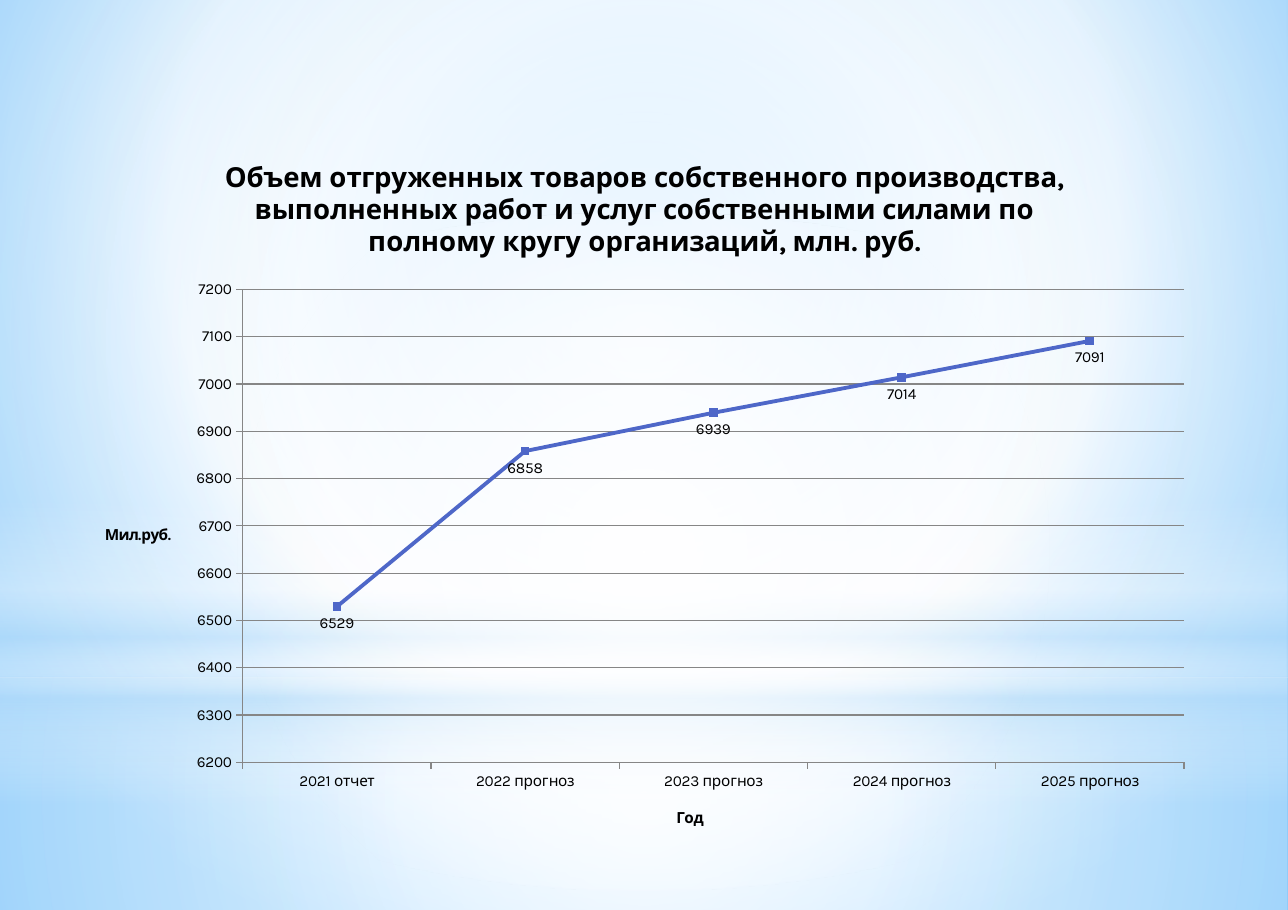
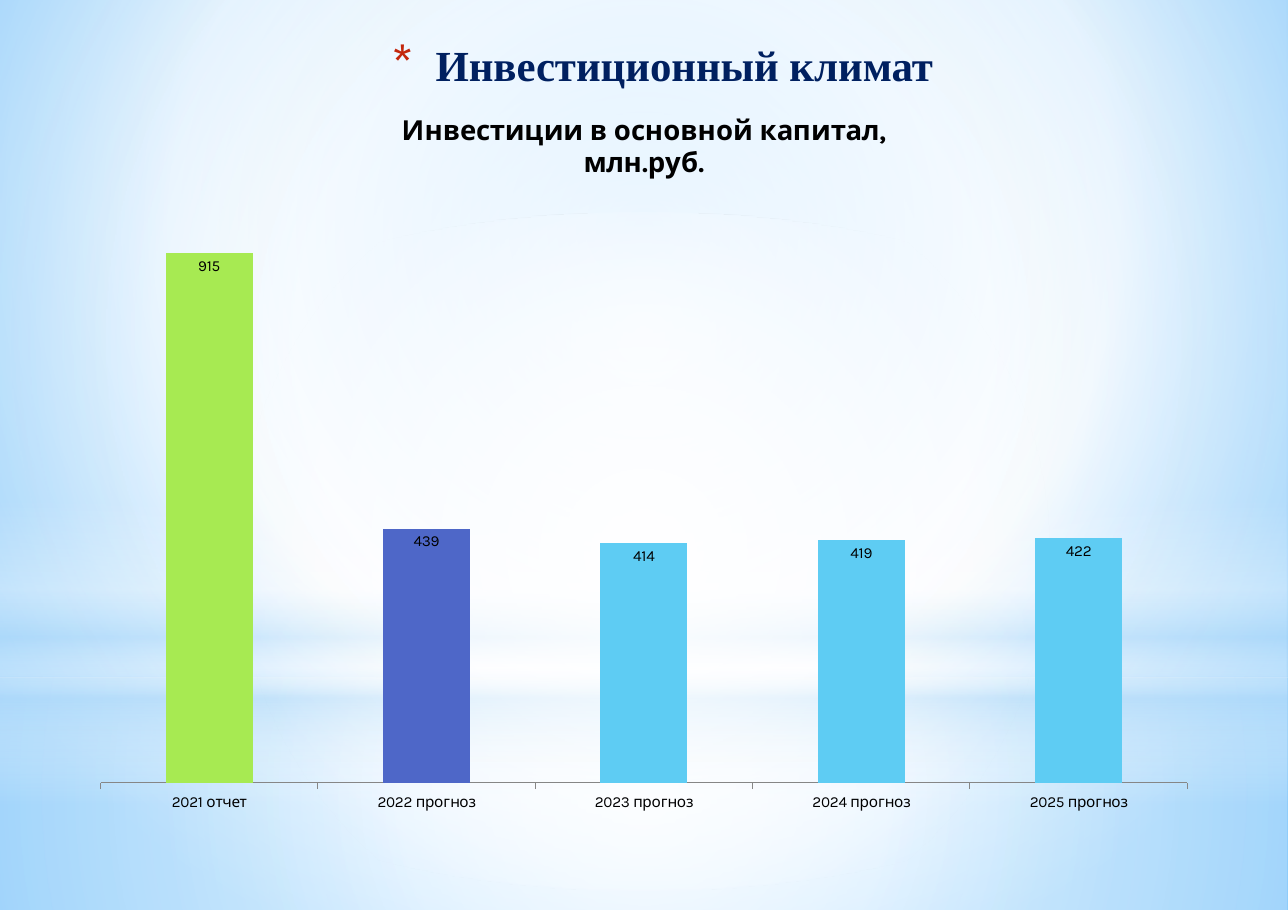
"""Build two slides with economic forecast charts on a shared sky-blue backdrop."""
from dataclasses import dataclass
from typing import Optional

from pptx import Presentation
from pptx.chart.chart import Chart
from pptx.chart.data import CategoryChartData
from pptx.dml.color import RGBColor
from pptx.enum.chart import XL_CHART_TYPE as ChartType
from pptx.enum.chart import XL_LABEL_POSITION as LabelPosition
from pptx.enum.chart import XL_MARKER_STYLE as MarkerStyle
from pptx.enum.shapes import MSO_SHAPE as Preset
from pptx.enum.text import MSO_ANCHOR as Anchor
from pptx.enum.text import PP_ALIGN as Align
from pptx.oxml import parse_xml
from pptx.oxml.ns import nsdecls
from pptx.slide import Slide, SlideLayout
from pptx.text.text import TextFrame
from pptx.util import Inches, Pt


@dataclass(frozen=True)
class Theme:
    chart_font: str = "Karla"
    heading_font: str = "Times New Roman"
    text: str = "000000"
    heading: str = "002060"
    bullet: str = "C3260C"
    axis: str = "868686"
    blue: str = "4E67C8"
    sky: str = "5ECCF3"
    green: str = "A7EA52"
    white: str = "FFFFFF"
    haze: str = "B4DCFA"
    heading_size: int = 28
    title_size: int = 18
    label_size: int = 10


THEME = Theme()
WIDTH, HEIGHT = 11.69, 8.26
CENTER = (50, 50, 50, 50)
YEARS = ("2021 отчет", "2022 прогноз", "2023 прогноз", "2024 прогноз", "2025 прогноз")


@dataclass(frozen=True)
class Stop:
    position: int
    color: str
    opacity: int = 100


@dataclass(frozen=True)
class Gradient:
    stops: tuple[Stop, ...]
    focus: Optional[tuple[int, int, int, int]] = CENTER


@dataclass(frozen=True)
class Glow:
    preset: Preset
    top: float
    height: float
    gradient: Gradient


@dataclass(frozen=True)
class ChartBox:
    kind: ChartType
    box: tuple[float, float, float, float]
    title: str
    values: tuple[int, ...]
    color: str
    label_position: LabelPosition
    scale: tuple[int, int, int]


BACKDROP = Gradient(
    (Stop(0, "9ED5FF"), Stop(60, THEME.white), Stop(100, "5BB9FF")), (20, 10, 20, 60)
)
GLOWS = (
    Glow(Preset.RECTANGLE, 6.15, 2.11, Gradient(
        (Stop(0, THEME.white, 91), Stop(37, THEME.white, 76), Stop(100, THEME.haze, 79)))),
    Glow(Preset.RECTANGLE, 0, 6.15, Gradient(
        (Stop(0, THEME.white, 89), Stop(48, THEME.white, 62), Stop(100, THEME.haze, 79)))),
    Glow(Preset.RECTANGLE, 4.54, 2.75, Gradient(
        (Stop(0, THEME.white, 0), Stop(29, THEME.white, 30), Stop(45, THEME.haze, 40),
         Stop(55, THEME.white, 26), Stop(65, THEME.haze, 60), Stop(100, THEME.white, 0)), None)),
    Glow(Preset.OVAL, 1.93, 6.15, Gradient(
        (Stop(0, THEME.white), Stop(56, THEME.white, 0)))),
)
SHIPMENTS = ChartBox(
    ChartType.LINE_MARKERS, (0.75, 1.21, 10.2, 6.5),
    "Объем отгруженных товаров собственного производства, выполненных работ и услуг "
    "собственными силами по полному кругу организаций, млн. руб.",
    (6529, 6858, 6939, 7014, 7091), THEME.blue, LabelPosition.BELOW, (6200, 7200, 100),
)
INVESTMENTS = ChartBox(
    ChartType.COLUMN_STACKED, (0.76, 0.81, 10.17, 6.64),
    "Инвестиции в основной капитал,\nмлн.руб.",
    (915, 439, 414, 419, 422), THEME.sky, LabelPosition.INSIDE_END, (0, 1000, 100),
)


def rgb(color: str) -> RGBColor:
    return RGBColor.from_string(color)


def set_gradient(element, gradient: Gradient) -> None:
    stops = "".join(
        f'<a:gs pos="{stop.position * 1000}"><a:srgbClr val="{stop.color}">'
        f'<a:alpha val="{stop.opacity * 1000}"/></a:srgbClr></a:gs>'
        for stop in gradient.stops
    )
    if gradient.focus:
        sides = " ".join(
            f'{side}="{share * 1000}"' for side, share in zip("ltrb", gradient.focus)
        )
        direction = f'<a:path path="circle"><a:fillToRect {sides}/></a:path>'
    else:
        direction = '<a:lin ang="5400000" scaled="0"/>'
    old = element.xpath(".//a:gradFill")[0]
    old.getparent().replace(old, parse_xml(
        f'<a:gradFill {nsdecls("a")} rotWithShape="1">'
        f"<a:gsLst>{stops}</a:gsLst>{direction}</a:gradFill>"
    ))


def clear_layout(layout: SlideLayout) -> None:
    for placeholder in list(layout.placeholders):
        layout.shapes.element.remove(placeholder.element)


def draw_backdrop(layout: SlideLayout, slide: Slide) -> None:
    layout.background.fill.gradient()
    set_gradient(layout.element, BACKDROP)
    shapes = []
    for glow in GLOWS:
        shape = slide.shapes.add_shape(
            glow.preset, 0, Inches(glow.top), Inches(WIDTH), Inches(glow.height)
        )
        shape.shadow.inherit = False
        shape.line.fill.background()
        shape.fill.gradient()
        set_gradient(shape.element, glow.gradient)
        shapes.append(shape)
    for shape in shapes:
        layout.shapes.element.append(shape.element)


def write_title(text_frame: TextFrame, text: str, size: int) -> None:
    text_frame.text = text
    for paragraph in text_frame.paragraphs:
        paragraph.font.size = Pt(size)
        paragraph.font.bold = True
        paragraph.font.name = THEME.chart_font
        paragraph.font.color.rgb = rgb(THEME.text)


def add_forecast(slide: Slide, forecast: ChartBox) -> Chart:
    data = CategoryChartData(number_format="0")
    data.categories = YEARS
    data.add_series("Series 1", forecast.values)
    box = [Inches(length) for length in forecast.box]
    chart = slide.shapes.add_chart(forecast.kind, *box, data).chart
    chart.has_legend = False
    chart.font.name = THEME.chart_font
    chart.font.size = Pt(THEME.label_size)
    chart.font.color.rgb = rgb(THEME.text)
    chart.has_title = True
    write_title(chart.chart_title.text_frame, forecast.title, THEME.title_size)
    chart.plots[0].vary_by_categories = False

    value_axis = chart.value_axis
    value_axis.minimum_scale, value_axis.maximum_scale, value_axis.major_unit = forecast.scale
    value_axis.tick_labels.number_format = "0"
    value_axis.tick_labels.number_format_is_linked = False
    for axis in (chart.category_axis, value_axis):
        axis.format.line.color.rgb = rgb(THEME.axis)
        axis.format.line.width = Pt(0.75)

    labels = chart.plots[0].series[0].data_labels
    labels.show_value = True
    labels.position = forecast.label_position
    labels.number_format = "0"
    labels.number_format_is_linked = False
    return chart


def add_shipments(slide: Slide) -> None:
    chart = add_forecast(slide, SHIPMENTS)
    gridline = chart.value_axis.major_gridlines.format.line
    gridline.color.rgb = rgb(THEME.axis)
    gridline.width = Pt(0.75)
    for axis, text in ((chart.category_axis, "Год"), (chart.value_axis, "Мил.руб.")):
        write_title(axis.axis_title.text_frame, text, THEME.label_size)
        body = axis.axis_title.element.xpath(".//a:bodyPr")[0]
        body.set("rot", "0")
        body.set("vert", "horz")
    series = chart.plots[0].series[0]
    series.smooth = False
    series.format.line.color.rgb = rgb(SHIPMENTS.color)
    series.format.line.width = Pt(2.5)
    series.marker.style = MarkerStyle.SQUARE
    series.marker.size = 5
    series.marker.format.fill.solid()
    series.marker.format.fill.fore_color.rgb = rgb(SHIPMENTS.color)
    series.marker.format.line.color.rgb = rgb(SHIPMENTS.color)


def add_investments(slide: Slide) -> None:
    chart = add_forecast(slide, INVESTMENTS)
    chart.value_axis.visible = False
    chart.value_axis.has_major_gridlines = False
    plot = chart.plots[0]
    plot.overlap = 100
    plot.gap_width = 150
    series = plot.series[0]
    series.invert_if_negative = False
    fills = [series.format.fill] + [series.points[index].format.fill for index in range(2)]
    for fill, color in zip(fills, (INVESTMENTS.color, THEME.green, THEME.blue)):
        fill.solid()
        fill.fore_color.rgb = rgb(color)
    place_plot(chart, (0.015, 0.157, 0.97, 0.791))


def place_plot(chart: Chart, shares: tuple[float, float, float, float]) -> None:
    plot_area = chart.element.xpath(".//c:plotArea")[0]
    for layout in plot_area.xpath("./c:layout"):
        plot_area.remove(layout)
    lengths = "".join(
        f'<c:{name} val="{share}"/>' for name, share in zip("xywh", shares)
    )
    plot_area.insert(0, parse_xml(
        f'<c:layout {nsdecls("c")}><c:manualLayout><c:layoutTarget val="inner"/>'
        f'<c:xMode val="edge"/><c:yMode val="edge"/>{lengths}</c:manualLayout></c:layout>'
    ))


def add_heading(slide: Slide, text: str) -> None:
    shape = slide.shapes.add_textbox(Inches(0.67), Inches(0.25), Inches(10.68), Inches(0.72))
    text_frame = shape.text_frame
    text_frame.word_wrap = True
    text_frame.vertical_anchor = Anchor.TOP
    text_frame.margin_top = Inches(0.1)
    paragraph = text_frame.paragraphs[0]
    paragraph.text = text
    paragraph.alignment = Align.CENTER
    paragraph.font.name = THEME.heading_font
    paragraph.font.size = Pt(THEME.heading_size)
    paragraph.font.bold = True
    paragraph.font.color.rgb = rgb(THEME.heading)
    properties = shape.element.xpath(".//a:pPr")[0]
    properties.set("marL", str(Inches(0.4)))
    properties.set("indent", str(Inches(-0.4)))
    bullet = (
        f'<a:buClr {nsdecls("a")}><a:srgbClr val="{THEME.bullet}"/></a:buClr>',
        f'<a:buSzPct {nsdecls("a")} val="128000"/>',
        f'<a:buFont {nsdecls("a")} typeface="{THEME.chart_font}"/>',
        f'<a:buChar {nsdecls("a")} char="*"/>',
    )
    defaults = properties.xpath("./a:defRPr")[0]
    for part in bullet:
        defaults.addprevious(parse_xml(part))


def main() -> None:
    presentation = Presentation()
    presentation.slide_width = Inches(WIDTH)
    presentation.slide_height = Inches(HEIGHT)
    layout = presentation.slide_layouts[6]
    clear_layout(layout)

    shipments = presentation.slides.add_slide(layout)
    draw_backdrop(layout, shipments)
    add_shipments(shipments)

    investments = presentation.slides.add_slide(layout)
    add_heading(investments, "Инвестиционный климат")
    add_investments(investments)
    presentation.save("out.pptx")


if __name__ == "__main__":
    main()
